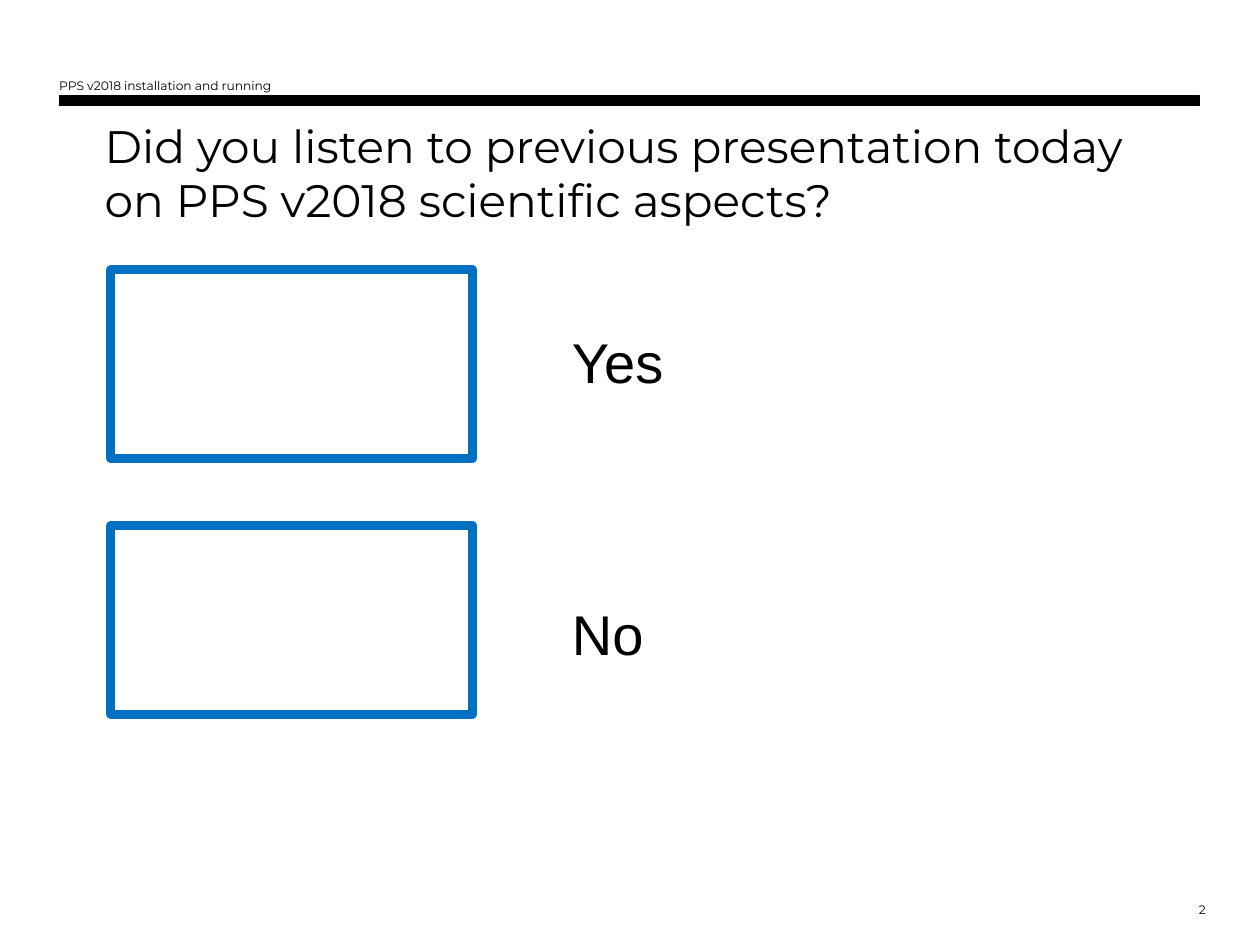
from lxml import etree
from pptx import Presentation
from pptx.dml.color import RGBColor
from pptx.enum.shapes import MSO_SHAPE
from pptx.enum.text import MSO_ANCHOR, MSO_AUTO_SIZE, PP_ALIGN
from pptx.oxml.ns import qn
from pptx.util import Inches, Pt

RECT = MSO_SHAPE.RECTANGLE
TOP, BOTTOM = MSO_ANCHOR.TOP, MSO_ANCHOR.BOTTOM
LEFT, RIGHT = PP_ALIGN.LEFT, PP_ALIGN.RIGHT
FIXED = MSO_AUTO_SIZE.NONE
COLS, ROWS = 100, 75  # grid over the whole slide
BLACK, BLUE = "000000", "0070C0"


def tint(code):
    return RGBColor.from_string(code)


class Page:
    """Holds the text styles and the current slide."""

    styles = {
        "title": {"name": "Montserrat", "size": Pt(26)},
        "small": {"name": "Montserrat", "size": Pt(7)},
        "reply": {"name": "Arial", "size": Pt(32)},
    }

    def __init__(self, deck):
        self.wide = deck.slide_width / COLS
        self.high = deck.slide_height / ROWS
        self.slide = deck.slides.add_slide(deck.slide_layouts[5])

    def area(self, x, y, w, h):
        return (round(x * self.wide), round(y * self.high),
                round(w * self.wide), round(h * self.high))

    def fill_in(self, box, lines, style, anchor=TOP, align=LEFT, pads=(0, 0, 0, 0), gap=0):
        frame = box.text_frame
        left, top, right, bottom = (Inches(pad) for pad in pads)
        form = {"word_wrap": True, "auto_size": FIXED, "vertical_anchor": anchor,
                "margin_left": left, "margin_top": top,
                "margin_right": right, "margin_bottom": bottom}
        for key, value in form.items():
            setattr(frame, key, value)
        frame.text = "\n".join(lines)
        for i, para in enumerate(frame.paragraphs):
            para.alignment = align
            para.space_before = Pt(gap if i else 0)
            for run in para.runs:
                for key, value in self.styles[style].items():
                    setattr(run.font, key, value)
                run.font.color.rgb = tint(BLACK)

    def title(self, spot, text):
        box = self.slide.shapes.title
        box.left, box.top, box.width, box.height = self.area(*spot)
        self.fill_in(box, [text], "title", anchor=BOTTOM)

    def text(self, spot, lines, style, **form):
        box = self.slide.shapes.add_textbox(*self.area(*spot))
        self.fill_in(box, lines, style, **form)

    def rect(self, spot, line, width, fill=None):
        box = self.slide.shapes.add_shape(RECT, *self.area(*spot))
        box.shadow.inherit = False
        if fill:
            box.fill.solid()
            box.fill.fore_color.rgb = tint(fill)
        else:
            box.fill.background()
        box.line.color.rgb = tint(line)
        box.line.width = Pt(width)
        # Rounded outline corners
        etree.SubElement(box.element.spPr.find(qn("a:ln")), qn("a:round"))


def main():
    deck = Presentation()
    deck.slide_width, deck.slide_height = Inches(10), Inches(7.5)
    page = Page(deck)

    # Header and page number
    page.rect((4.7, 7.6, 90.5, 0.8), BLACK, 0.75, fill=BLACK)
    page.text((4.7, 6.2, 75, 1.2), ["PPS v2018 installation and running"], "small")
    page.text((90.1, 71.6, 5.6, 1.2), ["2"], "small", align=RIGHT)

    # Question
    page.title((8.3, 9.1, 83.5, 8.9),
               "Did you listen to previous presentation today on PPS v2018 scientific aspects?")

    # Answer frames and their labels
    for row in (21.4, 41.7):
        page.rect((8.8, row, 28.7, 15), BLUE, 5)
    page.text((44.4, 19.7, 20.9, 33.3), ["Yes", "No"], "reply",
              pads=(0.1, 0.63, 0.1, 0.05), gap=117)

    deck.save("out.pptx")


if __name__ == "__main__":
    main()
